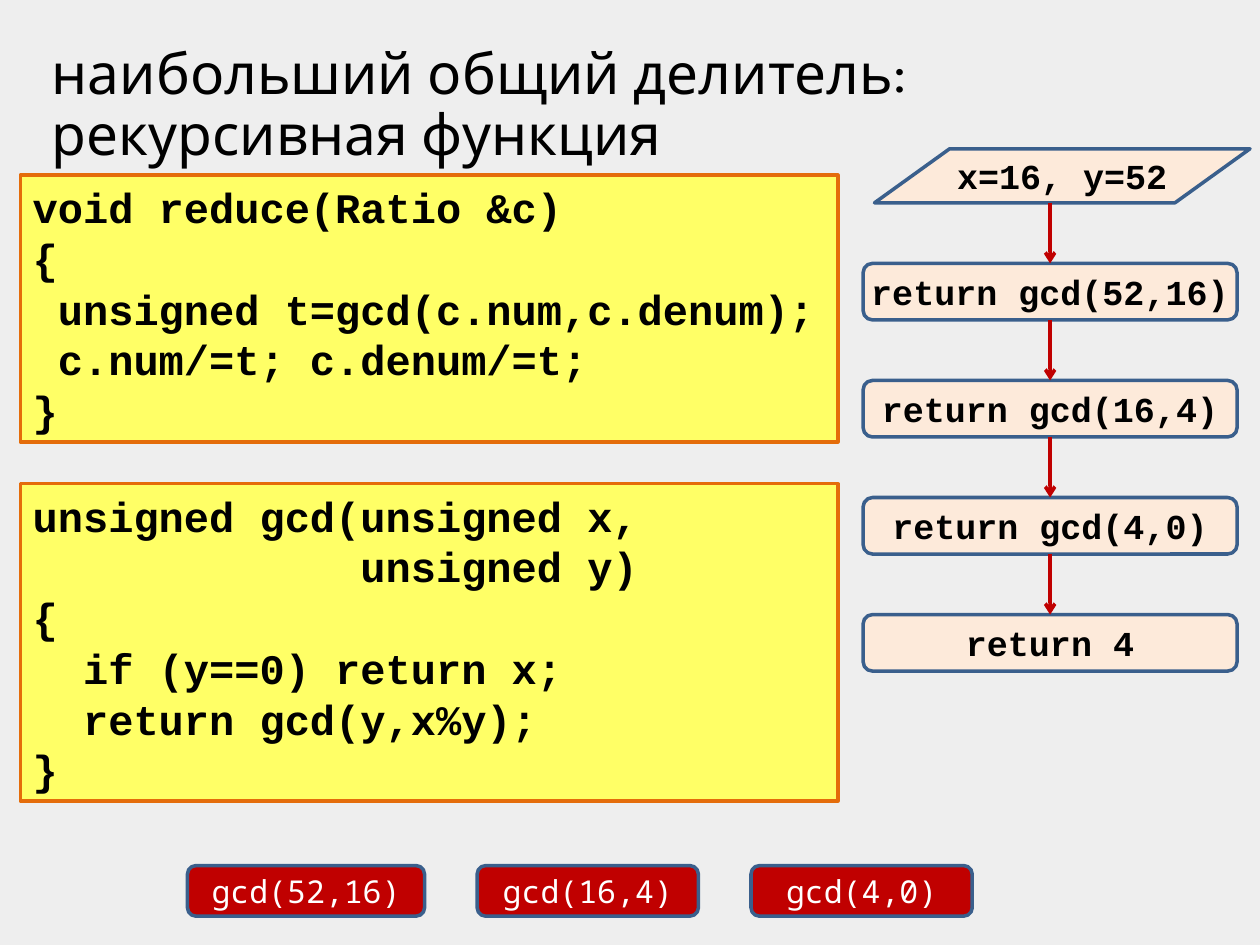
import dataclasses

import pptx
import pptx.dml.color
import pptx.enum.shapes
import pptx.enum.text
import pptx.oxml
import pptx.oxml.ns
import pptx.util

Cm = pptx.util.Cm
Pt = pptx.util.Pt
Shape = pptx.enum.shapes.MSO_SHAPE
Anchor = pptx.enum.text.MSO_ANCHOR
Align = pptx.enum.text.PP_ALIGN
AutoSize = pptx.enum.text.MSO_AUTO_SIZE


@dataclasses.dataclass(frozen=True)
class Theme:
    """Colours, fonts and type sizes of the slide."""
    background: str = "EEEEEE"
    ink: str = "000000"
    code_fill: str = "FFFF66"
    code_edge: str = "E46C0A"
    step_fill: str = "FDEADA"
    step_edge: str = "3A5F8C"
    accent: str = "C00000"
    light: str = "FFFFFF"
    title_font: str = "Karla"
    code_font: str = "Courier New"
    call_font: str = "Noto Sans Mono"
    title_size: float = 32.4
    code_size: float = 24
    step_size: float = 20
    call_size: float = 18
    line_width: float = 2


THEME = Theme()


def rgb(value):
    """Turn a hex string into a colour."""
    return pptx.dml.color.RGBColor.from_string(value)


def write_text(frame, text, *, font, size, color=THEME.ink, bold=False, align=Align.LEFT,
               anchor=Anchor.TOP, spacing=None, inset=None, autosize=AutoSize.NONE):
    """Fill a text frame, one paragraph for each line, and format it."""
    frame.text = text
    frame.word_wrap = True
    frame.auto_size = autosize
    frame.vertical_anchor = anchor
    if inset is not None:
        frame.margin_left = frame.margin_right = Cm(inset)
    for paragraph in frame.paragraphs:
        paragraph.alignment = align
        if spacing is not None:
            paragraph.line_spacing = spacing
        for run in paragraph.runs:
            run.font.name = font
            run.font.size = Pt(size)
            run.font.bold = bold
            run.font.color.rgb = rgb(color)


def add_box(slide, kind, left, top, width, height, fill, edge):
    """Add a filled, outlined shape without shadow, measured in centimetres."""
    box = slide.shapes.add_shape(kind, Cm(left), Cm(top), Cm(width), Cm(height))
    box.shadow.inherit = False
    box.fill.solid()
    box.fill.fore_color.rgb = rgb(fill)
    box.line.color.rgb = rgb(edge)
    box.line.width = Pt(THEME.line_width)
    return box


def add_arrow(slide, x, top, bottom):
    """Add a downward arrow, measured in centimetres."""
    arrow = slide.shapes.add_connector(
        pptx.enum.shapes.MSO_CONNECTOR.STRAIGHT, Cm(x), Cm(top), Cm(x), Cm(bottom))
    arrow.line.color.rgb = rgb(THEME.accent)
    arrow.line.width = Pt(THEME.line_width)
    head = pptx.oxml.parse_xml(f'<a:tailEnd {pptx.oxml.ns.nsdecls("a")} type="arrow"/>')
    arrow.line._get_or_add_ln().append(head)
    effects = pptx.oxml.parse_xml(f'<a:effectLst {pptx.oxml.ns.nsdecls("a")}/>')
    arrow._element.spPr.append(effects)
    return arrow


def place_title(slide, text, left, top, width, height):
    """Move and format the title placeholder."""
    title = slide.shapes.title
    title.left, title.top, title.width, title.height = map(Cm, (left, top, width, height))
    write_text(title.text_frame, text, font=THEME.title_font, size=THEME.title_size,
               anchor=Anchor.BOTTOM, spacing=0.9)


def place_code(slide, code, left, top, width, height):
    """Place a code listing in its panel."""
    panel = add_box(slide, Shape.RECTANGLE, left, top, width, height,
                    THEME.code_fill, THEME.code_edge)
    write_text(panel.text_frame, code, font=THEME.code_font, size=THEME.code_size,
               bold=True, spacing=Pt(29), autosize=AutoSize.SHAPE_TO_FIT_TEXT)


def place_trace(slide, arguments, returns, left, top, width):
    """Place the input and the chain of returns below it."""
    input_height, step_height, first_step, pitch = 1.09, 1.14, 2.31, 2.36
    centre = left + width / 2
    label = dict(font=THEME.code_font, size=THEME.step_size, bold=True,
                 align=Align.CENTER, anchor=Anchor.MIDDLE, inset=0.1)
    start = add_box(slide, Shape.FLOWCHART_DATA, left + 0.23, top, width + 0.03,
                    input_height, THEME.step_fill, THEME.step_edge)
    write_text(start.text_frame, arguments, **label)
    previous = None
    arrow_top = top + input_height
    for index, text in enumerate(returns):
        step_top = top + first_step + index * pitch
        step = add_box(slide, Shape.ROUNDED_RECTANGLE, left, step_top, width,
                       step_height, THEME.step_fill, THEME.step_edge)
        write_text(step.text_frame, text, **label)
        arrow = add_arrow(slide, centre, arrow_top, step_top)
        if previous is not None:
            arrow.begin_connect(previous, 2)
        arrow.end_connect(step, 0)
        previous = step
        arrow_top = step_top + step_height


def place_calls(slide, calls, left, top, height, gap):
    """Place the recursive calls in a row with equal gaps."""
    for text, width in calls:
        call = add_box(slide, Shape.ROUNDED_RECTANGLE, left, top, width, height,
                       THEME.accent, THEME.step_edge)
        write_text(call.text_frame, text, font=THEME.call_font, size=THEME.call_size,
                   color=THEME.light, align=Align.CENTER, anchor=Anchor.MIDDLE)
        left += width + gap


REDUCE_CODE = """void reduce(Ratio &c)
{
 unsigned t=gcd(c.num,c.denum);
 c.num/=t; c.denum/=t;
}"""

GCD_CODE = """unsigned gcd(unsigned x,
             unsigned y)
{
  if (y==0) return x;
  return gcd(y,x%y);
}"""


def main():
    """Build the slide and save it."""
    deck = pptx.Presentation()
    deck.slide_width, deck.slide_height = Cm(25.4), Cm(19.05)
    slide = deck.slides.add_slide(deck.slide_layouts.get_by_name("Title Only"))
    slide.background.fill.solid()
    slide.background.fill.fore_color.rgb = rgb(THEME.background)

    place_title(slide, "наибольший общий делитель: рекурсивная функция",
                0.79, 0.33, 23.62, 3.18)
    place_code(slide, REDUCE_CODE, 0.41, 3.53, 16.48, 5.38)
    place_code(slide, GCD_CODE, 0.41, 9.75, 16.48, 6.4)
    place_trace(slide, "x=16, y=52",
                ["return gcd(52,16)", "return gcd(16,4)", "return gcd(4,0)", "return 4"],
                17.4, 3, 7.54)
    place_calls(slide, [("gcd(52,16)", 4.78), ("gcd(16,4)", 4.46), ("gcd(4,0)", 4.46)],
                3.78, 17.45, 1.02, 1.06)
    deck.save("out.pptx")


if __name__ == "__main__":
    main()
